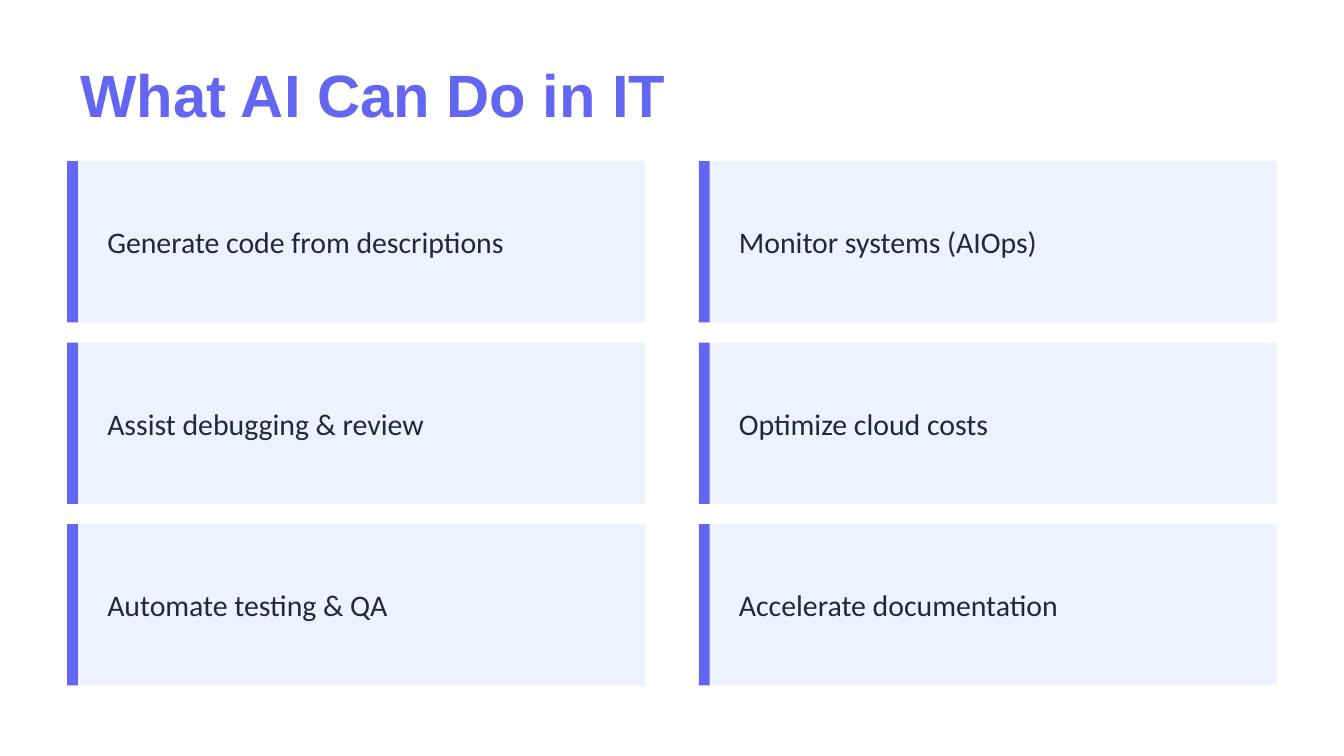
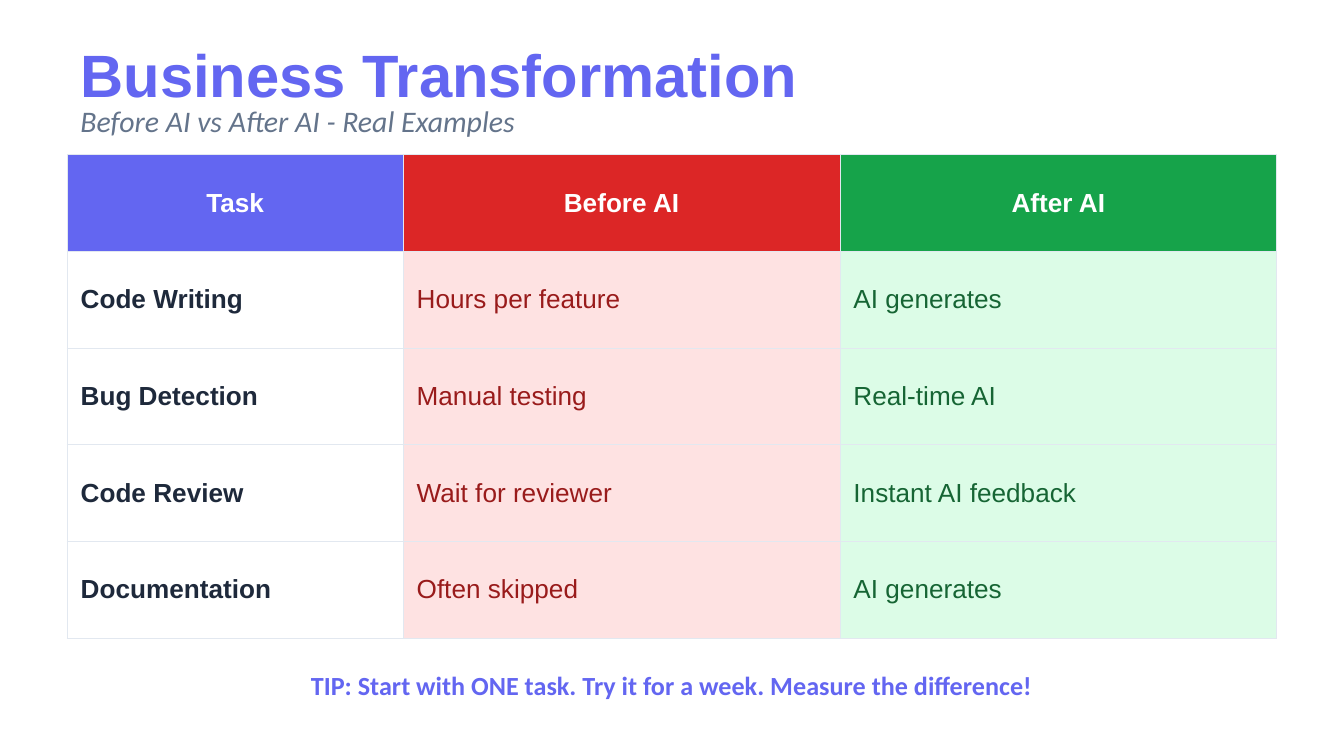
"""Build two slides on what AI can do in IT and how it changes everyday tasks."""

from dataclasses import dataclass
from typing import Optional

from lxml.etree import SubElement
from pptx import Presentation
from pptx.dml.color import RGBColor
from pptx.enum.shapes import MSO_SHAPE
from pptx.enum.text import MSO_ANCHOR, MSO_AUTO_SIZE, PP_ALIGN
from pptx.oxml.ns import qn
from pptx.util import Inches, Pt

INDIGO = RGBColor(0x63, 0x66, 0xF1)
PALE_INDIGO = RGBColor(0xEE, 0xF2, 0xFF)
INK = RGBColor(0x1E, 0x29, 0x3B)
SLATE = RGBColor(0x64, 0x74, 0x8B)
RULE = RGBColor(0xE2, 0xE8, 0xF0)
WHITE = RGBColor(0xFF, 0xFF, 0xFF)
RED = RGBColor(0xDC, 0x26, 0x26)
PALE_RED = RGBColor(0xFE, 0xE2, 0xE2)
DARK_RED = RGBColor(0x99, 0x1B, 0x1B)
GREEN = RGBColor(0x16, 0xA3, 0x4A)
PALE_GREEN = RGBColor(0xDC, 0xFC, 0xE7)
DARK_GREEN = RGBColor(0x16, 0x65, 0x34)

PAGE_WIDTH = 10
PAGE_HEIGHT = PAGE_WIDTH * 9 / 16
MARGIN = 0.5
CONTENT_WIDTH = PAGE_WIDTH - 2 * MARGIN
CARD_WIDTH, CARD_HEIGHT = 4.3, 1.2
COLUMN_STEP, ROW_STEP = 4.7, 1.35
ROW_HEIGHT = 0.72


@dataclass(frozen=True)
class TextStyle:
    """Character format and alignment of a piece of text."""

    size: float
    name: str
    color: RGBColor
    bold: bool = False
    italic: bool = False
    align: PP_ALIGN = PP_ALIGN.LEFT


@dataclass(frozen=True)
class Column:
    """One column of the comparison table."""

    heading: str
    width: float
    heading_fill: RGBColor
    body_fill: Optional[RGBColor]
    body_color: RGBColor
    bold: bool
    entries: tuple[str, ...]


TITLE = TextStyle(32, "Arial", INDIGO, bold=True)
SUBTITLE = TextStyle(16, "Calibri", SLATE, italic=True)
CARD_TEXT = TextStyle(16, "Calibri", INK)
TABLE_HEADING = TextStyle(14, "Arial", WHITE, bold=True, align=PP_ALIGN.CENTER)
TIP = TextStyle(14, "Calibri", INDIGO, bold=True, align=PP_ALIGN.CENTER)

ABILITIES = (
    ("Generate code from descriptions", "Assist debugging & review", "Automate testing & QA"),
    ("Monitor systems (AIOps)", "Optimize cloud costs", "Accelerate documentation"),
)

COLUMNS = (
    Column("Task", 2.5, INDIGO, None, INK, True,
           ("Code Writing", "Bug Detection", "Code Review", "Documentation")),
    Column("Before AI", 3.25, RED, PALE_RED, DARK_RED, False,
           ("Hours per feature", "Manual testing", "Wait for reviewer", "Often skipped")),
    Column("After AI", 3.25, GREEN, PALE_GREEN, DARK_GREEN, False,
           ("AI generates", "Real-time AI", "Instant AI feedback", "AI generates")),
)


def write(frame, text: str, style: TextStyle) -> None:
    """Fill a text frame with one formatted paragraph."""
    para = frame.paragraphs[0]
    para.alignment = style.align
    span = para.add_run()
    span.text = text
    formats = {"size": Pt(style.size), "name": style.name,
               "bold": style.bold, "italic": style.italic}
    for attribute, value in formats.items():
        setattr(span.font, attribute, value)
    span.font.color.rgb = style.color


def fill_frame(frame, text: str, style: TextStyle) -> None:
    """Set up a wrapped, vertically centred frame and write its text."""
    formats = {"word_wrap": True, "auto_size": MSO_AUTO_SIZE.NONE,
               "vertical_anchor": MSO_ANCHOR.MIDDLE}
    for attribute, value in formats.items():
        setattr(frame, attribute, value)
    write(frame, text, style)


def add_text(page, left: float, top: float, width: float, height: float,
             text: str, style: TextStyle) -> None:
    """Add a text box."""
    box = page.shapes.add_textbox(Inches(left), Inches(top), Inches(width), Inches(height))
    fill_frame(box.text_frame, text, style)


def add_block(page, left: float, top: float, width: float, height: float,
              color: RGBColor) -> None:
    """Add a plain filled rectangle."""
    block = page.shapes.add_shape(MSO_SHAPE.RECTANGLE, Inches(left), Inches(top),
                                  Inches(width), Inches(height))
    block.shadow.inherit = False
    block.fill.solid()
    block.fill.fore_color.rgb = color
    block.line.fill.background()


def add_page(deck, title: str, top: float, height: float):
    """Add a title-only slide and place its title."""
    page = deck.slides.add_slide(deck.slide_layouts[5])
    page.background.fill.solid()
    page.background.fill.fore_color.rgb = WHITE
    placement = {"left": MARGIN, "top": top, "width": CONTENT_WIDTH, "height": height}
    for attribute, value in placement.items():
        setattr(page.shapes.title, attribute, Inches(value))
    fill_frame(page.shapes.title.text_frame, title, TITLE)
    return page


def add_card(page, left: float, top: float, text: str) -> None:
    """Add a pale card with an accent bar on its left."""
    add_block(page, left, top, CARD_WIDTH, CARD_HEIGHT, PALE_INDIGO)
    add_block(page, left, top, 0.08, CARD_HEIGHT, INDIGO)
    add_text(page, left + 0.2, top + 0.15, CARD_WIDTH - 0.4, CARD_HEIGHT - 0.3,
             text, CARD_TEXT)


def add_borders(cell) -> None:
    """Draw a thin rule on all four sides of a cell."""
    properties = cell._tc.get_or_add_tcPr()
    for side in ("a:lnL", "a:lnR", "a:lnT", "a:lnB"):
        line = SubElement(properties, qn(side), w=str(Pt(0.5)))
        solid = SubElement(line, qn("a:solidFill"))
        SubElement(solid, qn("a:srgbClr"), val=str(RULE))


def fill_cell(cell, text: str, style: TextStyle, color: Optional[RGBColor]) -> None:
    """Write and colour one table cell."""
    add_borders(cell)
    cell.vertical_anchor = MSO_ANCHOR.MIDDLE
    if color is None:
        cell.fill.background()
    else:
        cell.fill.solid()
        cell.fill.fore_color.rgb = color
    write(cell.text_frame, text, style)


def add_comparison(page, top: float) -> None:
    """Add the before and after table."""
    row_count = len(COLUMNS[0].entries) + 1
    table = page.shapes.add_table(
        row_count, len(COLUMNS), Inches(MARGIN), Inches(top),
        Inches(CONTENT_WIDTH), Inches(ROW_HEIGHT * row_count)).table
    table.first_row = table.horz_banding = False
    for row in table.rows:
        row.height = Inches(ROW_HEIGHT)
    for index, column in enumerate(COLUMNS):
        table.columns[index].width = Inches(column.width)
        fill_cell(table.cell(0, index), column.heading, TABLE_HEADING, column.heading_fill)
        body = TextStyle(14, "Arial", column.body_color, bold=column.bold)
        for row_index, entry in enumerate(column.entries, start=1):
            fill_cell(table.cell(row_index, index), entry, body, column.body_fill)


def build_abilities(deck) -> None:
    """Build the slide of ability cards."""
    page = add_page(deck, "What AI Can Do in IT", 0.4, 0.6)
    for column, abilities in enumerate(ABILITIES):
        for row, ability in enumerate(abilities):
            add_card(page, MARGIN + column * COLUMN_STEP, 1.2 + row * ROW_STEP, ability)


def build_transformation(deck) -> None:
    """Build the slide that compares work before and after AI."""
    page = add_page(deck, "Business Transformation", 0.3, 0.5)
    add_text(page, MARGIN, 0.75, CONTENT_WIDTH, 0.3,
             "Before AI vs After AI - Real Examples", SUBTITLE)
    add_comparison(page, 1.15)
    add_text(page, MARGIN, 4.9, CONTENT_WIDTH, 0.4,
             "TIP: Start with ONE task. Try it for a week. Measure the difference!", TIP)


def main() -> None:
    """Build and save the deck."""
    deck = Presentation()
    deck.slide_width, deck.slide_height = Inches(PAGE_WIDTH), Inches(PAGE_HEIGHT)
    build_abilities(deck)
    build_transformation(deck)
    deck.save("out.pptx")


if __name__ == "__main__":
    main()
